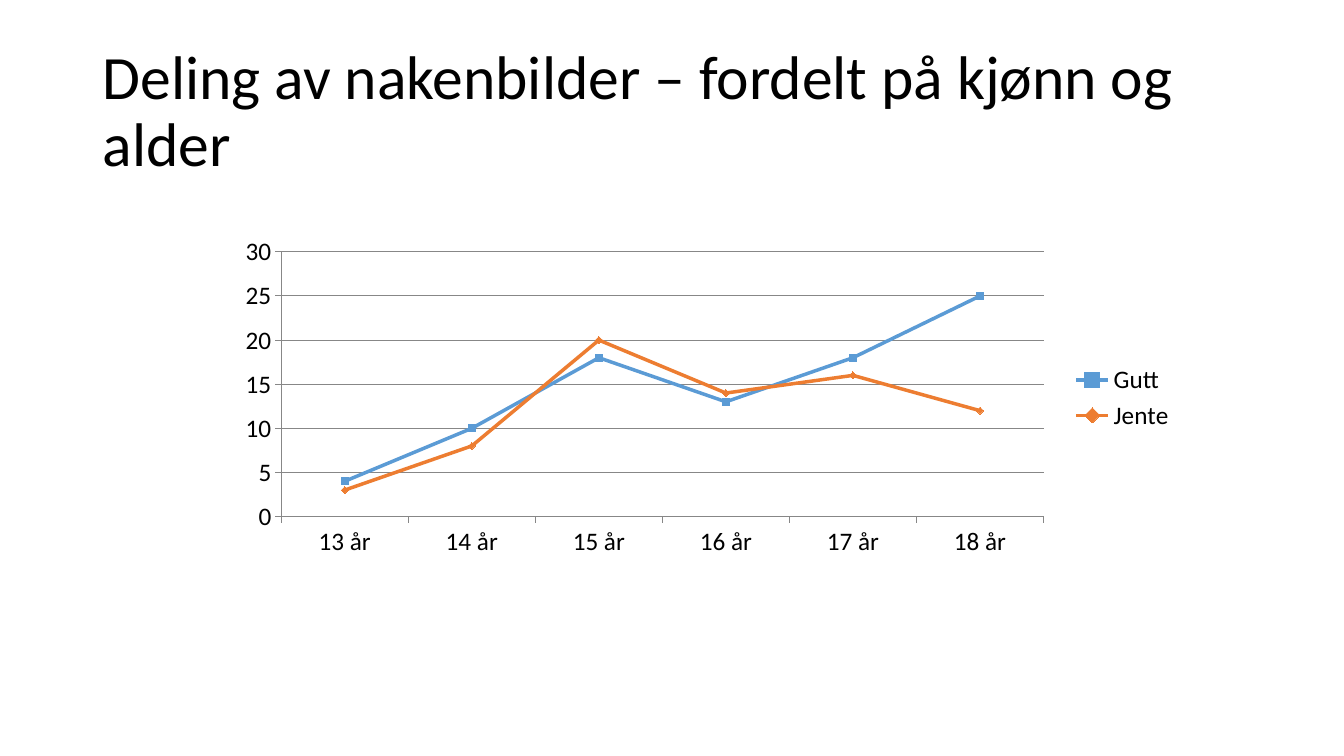
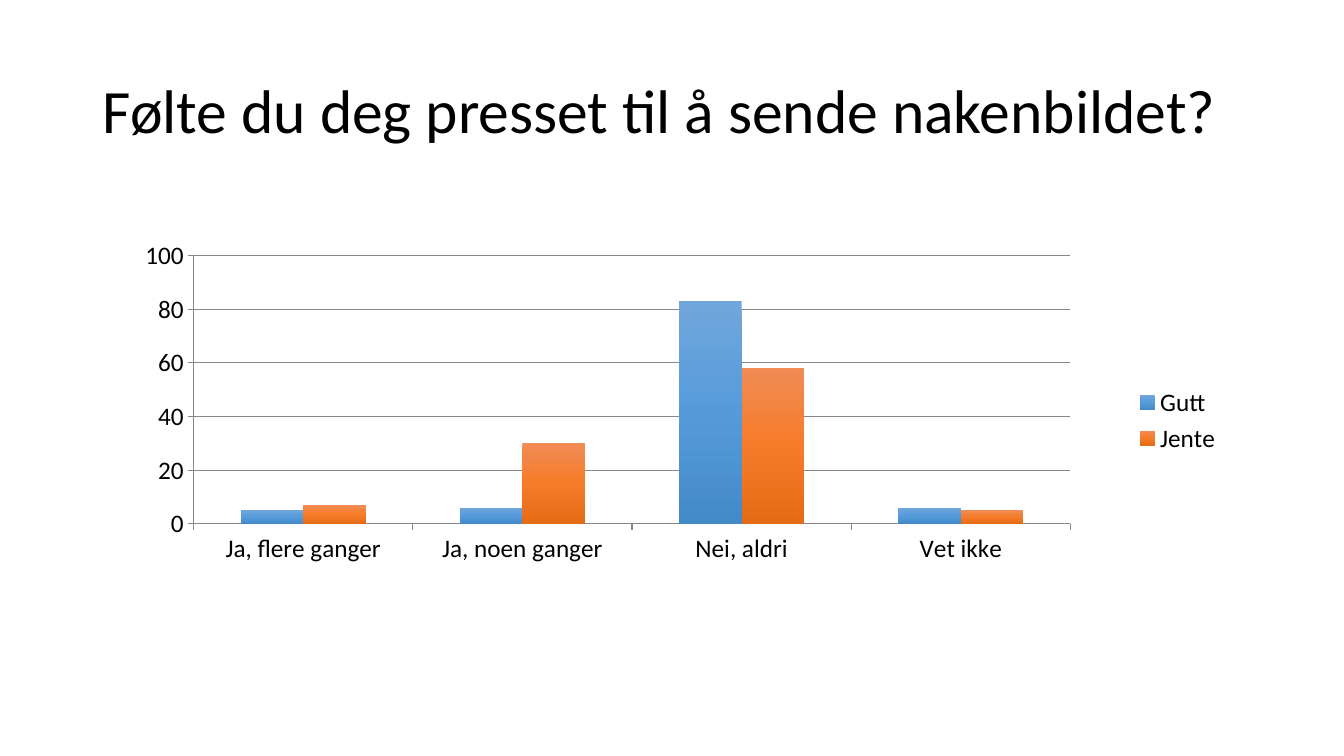
import copy

import lxml.etree
import pptx
import pptx.chart.data
import pptx.dml.color
import pptx.enum.chart
import pptx.enum.text
import pptx.oxml.ns
import pptx.util

Cm, Pt = pptx.util.Cm, pptx.util.Pt
qn = pptx.oxml.ns.qn
ChartType = pptx.enum.chart.XL_CHART_TYPE
Marker = pptx.enum.chart.XL_MARKER_STYLE


def rgb(value):
    return pptx.dml.color.RGBColor.from_string(value)


class Report:
    """Holds the shared style and the current page."""

    font = "Calibri"
    ink = "000000"
    rule = "878787"
    colours = ("5B9BD5", "ED7D31")
    gradients = (("71A6DB", "559BDB", "438AC9"), ("F18C55", "F67B28", "E56B17"))
    markers = (Marker.SQUARE, Marker.DIAMOND)

    def __init__(self):
        self.deck = pptx.Presentation()
        self.deck.slide_width, self.deck.slide_height = Cm(33.87), Cm(19.05)
        self.page = None

    def new_page(self, title):
        self.page = self.deck.slides.add_slide(self.deck.slide_layouts[6])
        self.title(title)

    def title(self, text):
        box = self.page.shapes.add_textbox(Cm(2.34), Cm(1.01), Cm(29.21), Cm(3.68))
        frame = box.text_frame
        frame.word_wrap = True
        frame.vertical_anchor = pptx.enum.text.MSO_ANCHOR.MIDDLE
        para = frame.paragraphs[0]
        para.line_spacing = 0.9
        span = para.add_run()
        span.text = text
        self.style_font(span.font, 44)

    def style_font(self, font, size):
        font.name, font.size = self.font, Pt(size)
        font.color.rgb = rgb(self.ink)

    def chart(self, kind, place, plot_area, categories, series, top, step):
        data = pptx.chart.data.CategoryChartData(number_format="General")
        data.categories = categories
        for name, values in series.items():
            data.add_series(name, values)
        lengths = [Cm(length) for length in place]
        chart = self.page.shapes.add_chart(kind, *lengths, data).chart
        chart.has_title = False
        self.style_font(chart.font, 18)
        chart.has_legend = True
        chart.legend.position = pptx.enum.chart.XL_LEGEND_POSITION.RIGHT
        chart.legend.include_in_layout = False
        self.style_axes(chart, top, step)
        self.place_plot(chart, plot_area)
        return chart.plots[0]

    def style_axes(self, chart, top, step):
        values = chart.value_axis
        values.minimum_scale, values.maximum_scale = 0, top
        values.major_unit = step
        values.has_major_gridlines = True
        for axis in (chart.category_axis, values):
            axis.major_tick_mark = pptx.enum.chart.XL_TICK_MARK.OUTSIDE
            axis.minor_tick_mark = pptx.enum.chart.XL_TICK_MARK.NONE
        for part in (chart.category_axis, values, values.major_gridlines):
            part.format.line.width = Pt(0.75)
            part.format.line.color.rgb = rgb(self.rule)

    def place_plot(self, chart, plot_area):
        area = chart.element.find(".//" + qn("c:plotArea"))
        for old in area.findall(qn("c:layout")):
            area.remove(old)
        layout = lxml.etree.Element(qn("c:layout"))
        manual = lxml.etree.SubElement(layout, qn("c:manualLayout"))
        settings = [("layoutTarget", "inner"), ("xMode", "edge"), ("yMode", "edge")]
        settings += zip("xywh", plot_area)
        for tag, value in settings:
            lxml.etree.SubElement(manual, qn("c:" + tag)).set("val", str(value))
        area.insert(0, layout)

    def line_chart(self, *details):
        plot = self.chart(ChartType.LINE_MARKERS, *details)
        plot.vary_by_categories = False
        for series, colour, marker in zip(plot.series, self.colours, self.markers):
            series.smooth = False
            series.format.line.width = Pt(2.5)
            series.format.line.color.rgb = rgb(colour)
            series.marker.style, series.marker.size = marker, 5
            series.marker.format.fill.solid()
            series.marker.format.fill.fore_color.rgb = rgb(colour)
            series.marker.format.line.color.rgb = rgb(colour)

    def column_chart(self, *details):
        plot = self.chart(ChartType.COLUMN_CLUSTERED, *details)
        plot.vary_by_categories = False
        plot.gap_width, plot.overlap = 150, 0
        for series, shades in zip(plot.series, self.gradients):
            series.invert_if_negative = False
            fill = series.format.fill
            fill.gradient()
            fill.gradient_angle = 270
            # A third stop between the two default ones
            stops = series._element.find(".//" + qn("a:gsLst"))
            stops.insert(1, copy.deepcopy(stops[0]))
            for stop, position, shade in zip(fill.gradient_stops, (0, 0.5, 1), shades):
                stop.position = position
                stop.color.rgb = rgb(shade)


def main():
    report = Report()

    # Sharing by gender and age
    report.new_page("Deling av nakenbilder – fordelt på kjønn og alder")
    report.line_chart(
        (4.01, 5.36, 25.86, 9.32),
        (0.119, 0.106, 0.743, 0.716),
        [f"{age} år" for age in range(13, 19)],
        {"Gutt": (4, 10, 18, 13, 18, 25), "Jente": (3, 8, 20, 14, 16, 12)},
        30, 5,
    )

    # Pressure to send
    report.new_page("Følte du deg presset til å sende nakenbildet?")
    report.column_chart(
        (2.82, 5.92, 28.22, 9.35),
        (0.073, 0.056, 0.783, 0.723),
        ["Ja, flere ganger", "Ja, noen ganger", "Nei, aldri", "Vet ikke"],
        {"Gutt": (5, 6, 83, 6), "Jente": (7, 30, 58, 5)},
        100, 20,
    )

    report.deck.save("out.pptx")


if __name__ == "__main__":
    main()
